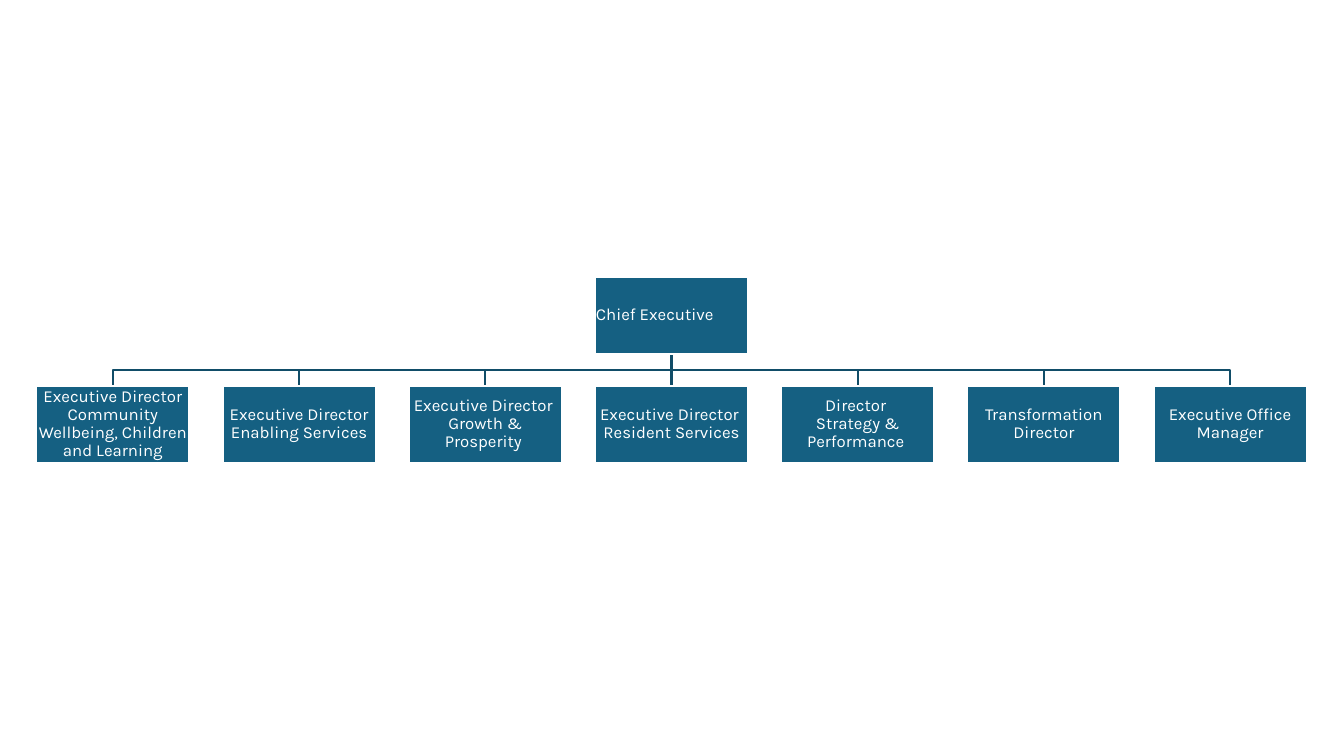
import copy

import pptx
import pptx.dml.color
import pptx.enum.shapes
import pptx.enum.text
import pptx.util
from lxml import etree
from pptx.util import Inches

CHIEF = "Chief Executive\t"
REPORTS = [
    "Executive Director\vCommunity Wellbeing, Children and Learning",
    "Executive Director\vEnabling Services",
    "Executive Director \vGrowth & Prosperity ",
    "Executive Director \vResident Services",
    "Director \vStrategy & Performance ",
    "Transformation Director",
    "Executive Office Manager",
]
COLOURS = {"box": "156082", "edge": "FFFFFF", "branch": "114D68", "text": "FFFFFF"}
FONT = "Karla"

SLIDE_W, SLIDE_H = 13.33, 7.5
BOX_W, BOX_H = 1.52, 0.76
CHIEF_TOP, REPORTS_TOP = 2.75, 3.83
FIRST_CENTRE, LAST_CENTRE = 1.12, 12.2
LINE_WIDTH = 1.5

PITCH = (LAST_CENTRE - FIRST_CENTRE) / (len(REPORTS) - 1)
CHIEF_CENTRE = (FIRST_CENTRE + LAST_CENTRE) / 2
CHIEF_BOTTOM = CHIEF_TOP + BOX_H
BUS_Y = (CHIEF_BOTTOM + REPORTS_TOP) / 2


def rgb(name):
    return pptx.dml.color.RGBColor.from_string(COLOURS[name])


def write_text(frame, text, size=12, colour="text", spacing=0.9, inset=0.01):
    """Fill a text frame; a vertical tab in the text is a line break."""
    frame.word_wrap = True
    frame.vertical_anchor = pptx.enum.text.MSO_ANCHOR.MIDDLE
    frame.margin_left = frame.margin_right = Inches(inset)
    frame.margin_top = frame.margin_bottom = Inches(inset)
    paragraph = frame.paragraphs[0]
    paragraph.text = text
    paragraph.alignment = pptx.enum.text.PP_ALIGN.CENTER
    paragraph.line_spacing = spacing
    for run in paragraph.runs:
        run.font.name = FONT
        run.font.size = pptx.util.Pt(size)
        run.font.color.rgb = rgb(colour)
    # Line breaks need the run format too, or they take the default size.
    for line_break in paragraph._p.findall(pptx.oxml.ns.qn("a:br")):
        line_break.append(copy.deepcopy(paragraph.runs[0]._r.rPr))


def style_line(line, colour):
    line.color.rgb = rgb(colour)
    line.width = pptx.util.Pt(LINE_WIDTH)


def add_branch(shapes, centre):
    """Join the chief's box to the report centred at the given x."""
    start_x, start_y = Inches(CHIEF_CENTRE), Inches(CHIEF_BOTTOM)
    end_x, end_y = Inches(centre), Inches(REPORTS_TOP)
    if abs(centre - CHIEF_CENTRE) < 0.01:
        branch = shapes.add_connector(
            pptx.enum.shapes.MSO_CONNECTOR.STRAIGHT, start_x, start_y, end_x, end_y)
        etree.SubElement(branch._element.spPr, pptx.oxml.ns.qn("a:effectLst"))
    else:
        bus_y = Inches(BUS_Y)
        outline = shapes.build_freeform(start_x, start_y)
        outline.add_line_segments(
            [(start_x, bus_y), (end_x, bus_y), (end_x, end_y)], close=False)
        branch = outline.convert_to_shape()
        branch.fill.background()
        branch.shadow.inherit = False
    style_line(branch.line, "branch")


def add_box(shapes, text, centre, top):
    box = shapes.add_shape(
        pptx.enum.shapes.MSO_SHAPE.RECTANGLE,
        Inches(centre - BOX_W / 2), Inches(top), Inches(BOX_W), Inches(BOX_H))
    box.shadow.inherit = False
    box.fill.solid()
    box.fill.fore_color.rgb = rgb("box")
    style_line(box.line, "edge")
    write_text(box.text_frame, text)


def main():
    deck = pptx.Presentation()
    deck.slide_width, deck.slide_height = Inches(SLIDE_W), Inches(SLIDE_H)
    blank_layout = deck.slide_layouts[6]
    shapes = deck.slides.add_slide(blank_layout).shapes

    centres = [FIRST_CENTRE + i * PITCH for i in range(len(REPORTS))]
    for centre in reversed(centres):
        add_branch(shapes, centre)
    add_box(shapes, CHIEF, CHIEF_CENTRE, CHIEF_TOP)
    for report, centre in zip(REPORTS, centres):
        add_box(shapes, report, centre, REPORTS_TOP)

    deck.save("out.pptx")


if __name__ == "__main__":
    main()
